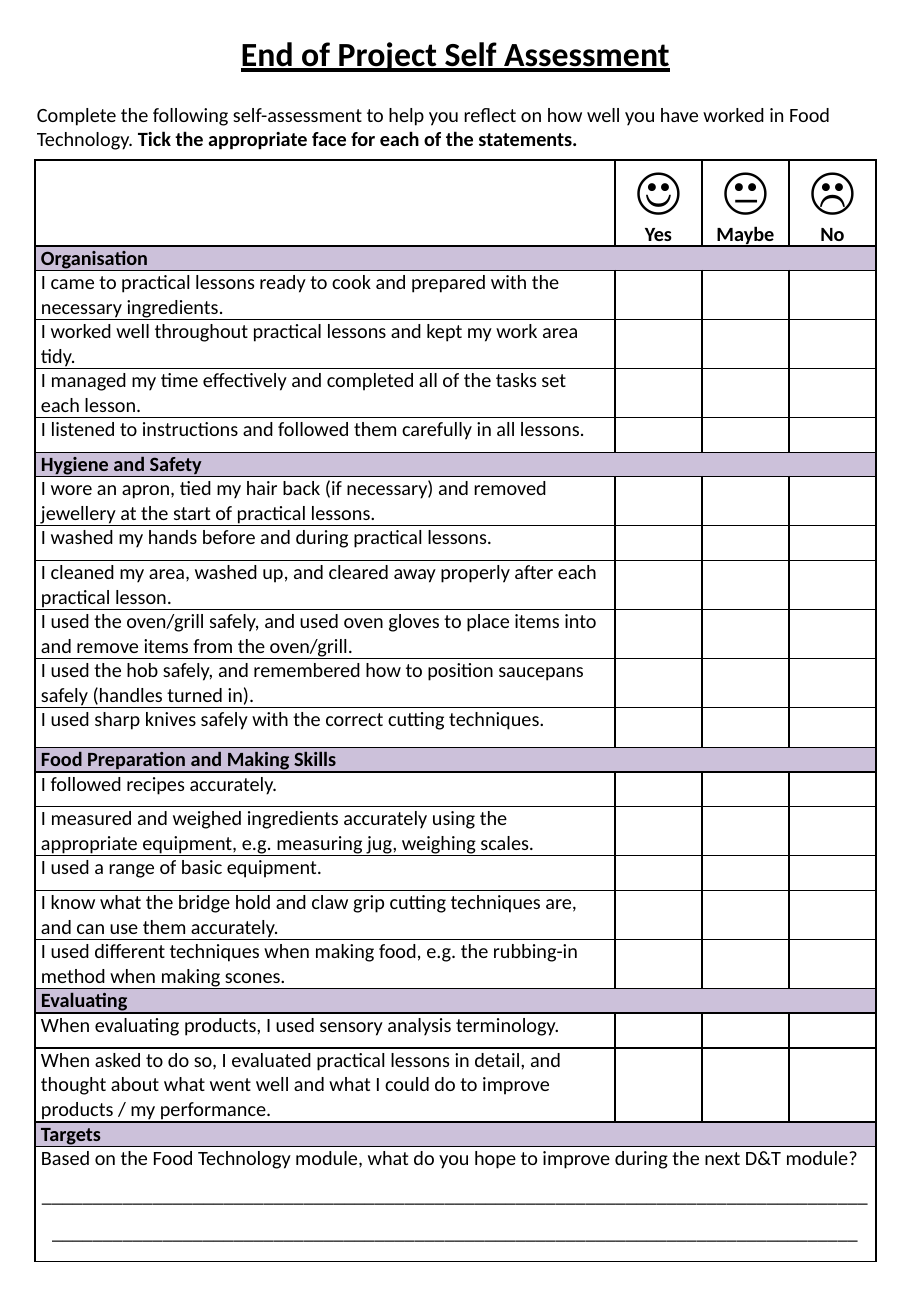
import dataclasses

import lxml.etree
import pptx
import pptx.dml.color
import pptx.enum.text
import pptx.oxml.ns
import pptx.util

PX = 7526  # EMU in one px
ALIGN = pptx.enum.text.PP_ALIGN


@dataclasses.dataclass(frozen=True)
class Theme:
    font: str = "Calibri"
    ink: str = "000000"
    band: str = "CCC1DA"
    title: int = 20
    body: int = 12
    face: int = 30
    border: int = 1


@dataclasses.dataclass(frozen=True)
class Box:
    left: int
    top: int
    width: int
    height: int

    def emu(self):
        return [side * PX for side in dataclasses.astuple(self)]


THEME = Theme()
COLUMNS = [580, 87, 87, 87]
HEADER, BAND, ONE_LINE, TALL_LINE, TWO_LINES, THREE_LINES, TARGETS = 86, 24, 35, 40, 49, 74, 115

FACES = [("☺", "Yes"), ("😐", "Maybe"), ("☹", "No")]
SECTIONS = [
    ("Organisation", [
        ("I came to practical lessons ready to cook and prepared with the necessary ingredients.", TWO_LINES),
        ("I worked well throughout practical lessons and kept my work area tidy.", TWO_LINES),
        ("I managed my time effectively and completed all of the tasks set each lesson.", TWO_LINES),
        ("I listened to instructions and followed them carefully in all lessons.", ONE_LINE),
    ]),
    ("Hygiene and Safety", [
        ("I wore an apron, tied my hair back (if necessary) and removed jewellery at the start of "
         "practical lessons.", TWO_LINES),
        ("I washed my hands before and during practical lessons.", ONE_LINE),
        ("I cleaned my area, washed up, and cleared away properly after each practical lesson.", TWO_LINES),
        ("I used the oven/grill safely, and used oven gloves to place items into and remove items "
         "from the oven/grill.", TWO_LINES),
        ("I used the hob safely, and remembered how to position saucepans safely (handles turned in).",
         TWO_LINES),
        ("I used sharp knives safely with the correct cutting techniques.", TALL_LINE),
    ]),
    ("Food Preparation and Making Skills", [
        ("I followed recipes accurately.", ONE_LINE),
        ("I measured and weighed ingredients accurately using the appropriate equipment, "
         "e.g. measuring jug, weighing scales.", TWO_LINES),
        ("I used a range of basic equipment.", ONE_LINE),
        ("I know what the bridge hold and claw grip cutting techniques are, and can use them accurately.",
         TWO_LINES),
        ("I used different techniques when making food, e.g. the rubbing-in method when making scones.",
         TWO_LINES),
    ]),
    ("Evaluating", [
        ("When evaluating products, I used sensory analysis terminology.", ONE_LINE),
        ("When asked to do so, I evaluated practical lessons in detail, and thought about what went well "
         "and what I could do to improve products / my performance.", THREE_LINES),
    ]),
    ("Targets", []),
]
TARGET_QUESTION = ("Based on the Food Technology module, what do you hope to improve during "
                   "the next D&T module?")
WRITING_LINES = "_" * 162


def style(para, size=THEME.body, bold=None, align=ALIGN.LEFT):
    para.alignment = align
    para.font.name = THEME.font
    para.font.size = pptx.util.Pt(size)
    para.font.bold = bold
    para.font.color.rgb = pptx.dml.color.RGBColor.from_string(THEME.ink)


def write(frame, lines):
    """Fill a text frame with (text, style options) lines."""
    for index, (text, options) in enumerate(lines):
        para = frame.paragraphs[0] if index == 0 else frame.add_paragraph()
        if text:
            para.add_run().text = text
        style(para, **options)


def format_cell(cell, fill=None):
    cell.margin_left = cell.margin_right = 6 * PX
    cell.margin_top = cell.margin_bottom = 0
    style(cell.text_frame.paragraphs[0])
    if fill:
        cell.fill.solid()
        cell.fill.fore_color.rgb = pptx.dml.color.RGBColor.from_string(fill)
    else:
        cell.fill.background()
    # Border lines stand before the fill
    properties = cell._tc.get_or_add_tcPr()
    qn = pptx.oxml.ns.qn
    for index, side in enumerate(("lnL", "lnR", "lnT", "lnB")):
        line = lxml.etree.Element(qn("a:" + side), w=str(pptx.util.Pt(THEME.border)))
        solid = lxml.etree.SubElement(line, qn("a:solidFill"))
        lxml.etree.SubElement(solid, qn("a:srgbClr"), val=THEME.ink)
        properties.insert(index, line)


def add_heading(page, box):
    frame = page.shapes.add_textbox(*box.emu()).text_frame
    frame.word_wrap = True
    write(frame, [
        ("End of Project Self Assessment", dict(size=THEME.title, bold=True, align=ALIGN.CENTER)),
        ("Complete the following self-assessment to help you reflect on how well you have worked "
         "in Food Technology. ", {}),
    ])
    title, intro = frame.paragraphs
    title.font.underline = True
    intro.space_before = pptx.util.Pt(17)
    span = intro.add_run()
    span.text = "Tick the appropriate face for each of the statements."
    span.font.bold = True


def add_assessment(page, box):
    # Rows as (kind, text, height)
    rows = [("header", "", HEADER)]
    for name, statements in SECTIONS:
        rows.append(("band", name, BAND))
        rows += [("statement", text, height) for text, height in statements]
    rows.append(("targets", TARGET_QUESTION, TARGETS))

    table = page.shapes.add_table(len(rows), len(COLUMNS), *box.emu()).table
    table.first_row = table.horz_banding = False
    for column, width in zip(table.columns, COLUMNS):
        column.width = width * PX

    for index, (kind, text, height) in enumerate(rows):
        table.rows[index].height = height * PX
        cells = list(table.rows[index].cells)
        for cell in cells:
            format_cell(cell, THEME.band if kind == "band" else None)
        if kind in ("band", "targets"):
            cells[0].merge(cells[-1])
        write(cells[0].text_frame, [(text, dict(bold=kind == "band"))])

        # Faces above the answer columns
        if kind == "header":
            for cell, (face, label) in zip(cells[1:], FACES):
                write(cell.text_frame, [
                    (face, dict(size=THEME.face, align=ALIGN.CENTER)),
                    (label, dict(bold=True, align=ALIGN.CENTER)),
                ])

        # Lines to write on
        if kind == "targets":
            para = cells[0].text_frame.add_paragraph()
            para.add_run().text = WRITING_LINES
            style(para, align=ALIGN.CENTER)
            para.line_spacing = 1.5


def main():
    deck = pptx.Presentation()
    deck.slide_width, deck.slide_height = 911 * PX, 1316 * PX
    page = deck.slides.add_slide(deck.slide_layouts[6])
    add_heading(page, Box(25, 27, 861, 130))
    add_assessment(page, Box(35, 160, sum(COLUMNS), 1110))
    deck.save("out.pptx")


if __name__ == "__main__":
    main()
